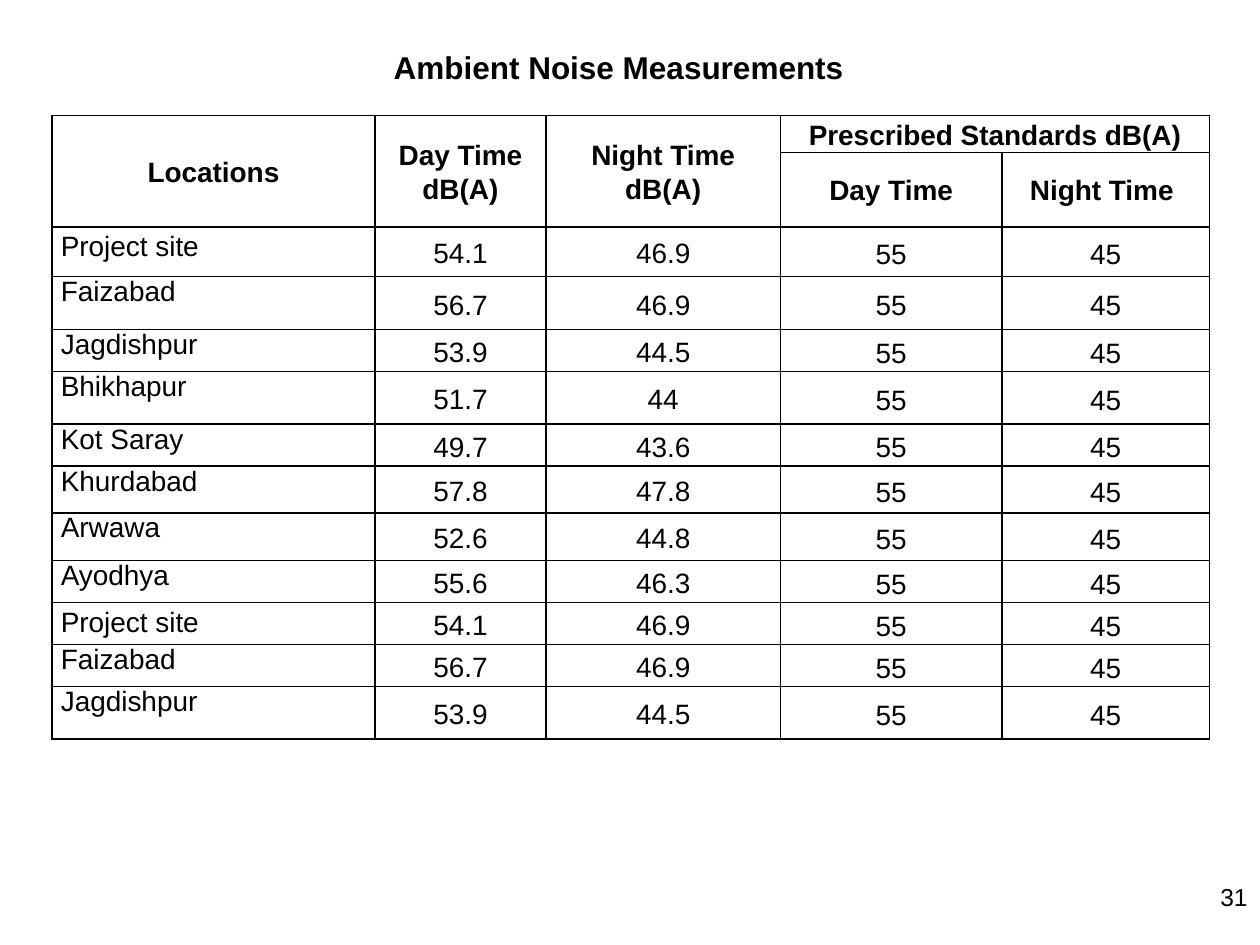
from lxml.etree import SubElement
from pptx import Presentation
from pptx.dml.color import RGBColor
from pptx.enum.text import MSO_ANCHOR, PP_ALIGN
from pptx.oxml.ns import qn
from pptx.util import Pt

BLACK = RGBColor(0, 0, 0)
FONT = "Arial"

COLUMN_WIDTHS = [184.5, 97.75, 134, 126.5, 118.75]
HEADER_HEIGHTS = [21, 42.5]
HEADER_SPACING = 1.1
VALUE_SPACING = 1.15
STANDARD_SPACING = 1.2
DAY_STANDARD, NIGHT_STANDARD = "55", "45"

# Text, first row and column, last row and column
HEADERS = [
    ("Locations", 0, 0, 1, 0),
    ("Day Time dB(A)", 0, 1, 1, 1),
    ("Night Time dB(A)", 0, 2, 1, 2),
    ("Prescribed Standards dB(A)", 0, 3, 0, 4),
    ("Day Time", 1, 3, 1, 3),
    ("Night Time ", 1, 4, 1, 4),
]

# Location, day level, night level, row height, line spacing of the location
MEASUREMENTS = [
    ("Project site", "54.1", "46.9", 28.5, 1.15),
    ("Faizabad", "56.7", "46.9", 30.25, 1),
    ("Jagdishpur", "53.9", "44.5", 24, 1),
    ("Bhikhapur", "51.7", "44", 30, 1),
    ("Kot Saray", "49.7", "43.6", 24, 1),
    ("Khurdabad", "57.8", "47.8", 26.75, 1),
    ("Arwawa", "52.6", "44.8", 27.25, 1),
    ("Ayodhya", "55.6", "46.3", 24, 1),
    ("Project site", "54.1", "46.9", 24, 1.15),
    ("Faizabad", "56.7", "46.9", 24, 1),
    ("Jagdishpur", "53.9", "44.5", 30, 1),
]


class SlideBuilder:
    def __init__(self, slide):
        self.slide = slide
        self.cell_size = 16
        self.cell_margin = 5
        self.border_width = 1

    def set_text(self, frame, text, size, align, bold=False, spacing=1):
        frame.text = text
        para = frame.paragraphs[0]
        para.alignment = align
        para.line_spacing = float(spacing)
        for span in para.runs:
            span.font.name = FONT
            span.font.size = Pt(size)
            span.font.bold = bold
            span.font.color.rgb = BLACK

    def text_box(self, text, left, top, width, height, size, align, bold=False):
        box = self.slide.shapes.add_textbox(Pt(left), Pt(top), Pt(width), Pt(height))
        box.text_frame.word_wrap = True
        self.set_text(box.text_frame, text, size, align, bold)

    def table(self, left, top, widths, heights):
        frame = self.slide.shapes.add_table(
            len(heights), len(widths), Pt(left), Pt(top), Pt(sum(widths)), Pt(sum(heights)))
        table = frame.table
        table.first_row = table.horz_banding = False
        for column, width in zip(table.columns, widths):
            column.width = Pt(width)
        for row, height in zip(table.rows, heights):
            row.height = Pt(height)
        for cell in table.iter_cells():
            self.border(cell)
            cell.fill.background()
        return table

    def border(self, cell):
        properties = cell._tc.get_or_add_tcPr()
        for side in ("lnL", "lnR", "lnT", "lnB"):
            line = SubElement(properties, qn(f"a:{side}"), w=str(Pt(self.border_width)))
            fill = SubElement(line, qn("a:solidFill"))
            SubElement(fill, qn("a:srgbClr"), val=str(BLACK))

    def cell(self, cell, text, spacing, align=PP_ALIGN.CENTER,
             anchor=MSO_ANCHOR.MIDDLE, bold=False):
        cell.margin_left = cell.margin_right = Pt(self.cell_margin)
        cell.margin_top = cell.margin_bottom = Pt(0)
        cell.vertical_anchor = anchor
        self.set_text(cell.text_frame, text, self.cell_size, align, bold, spacing)


def main():
    deck = Presentation()
    deck.slide_width, deck.slide_height = Pt(720), Pt(540)
    page = SlideBuilder(deck.slides.add_slide(deck.slide_layouts[6]))

    # Title
    page.text_box("Ambient Noise Measurements ", 30, 24, 652, 30, 18, PP_ALIGN.CENTER, bold=True)

    # Table grid
    heights = HEADER_HEIGHTS + [measurement[3] for measurement in MEASUREMENTS]
    table = page.table(29.75, 66, COLUMN_WIDTHS, heights)

    # Header cells
    for text, row, column, last_row, last_column in HEADERS:
        cell = table.cell(row, column)
        if (row, column) != (last_row, last_column):
            cell.merge(table.cell(last_row, last_column))
        page.cell(cell, text, HEADER_SPACING, bold=True)

    # Measurements beside the prescribed standards
    for row, (location, day, night, _, spacing) in enumerate(MEASUREMENTS, len(HEADER_HEIGHTS)):
        page.cell(table.cell(row, 0), location, spacing, PP_ALIGN.LEFT, MSO_ANCHOR.TOP)
        for column, level in enumerate((day, night), 1):
            page.cell(table.cell(row, column), level, VALUE_SPACING)
        for column, limit in enumerate((DAY_STANDARD, NIGHT_STANDARD), 3):
            page.cell(table.cell(row, column), limit, STANDARD_SPACING)

    # Page number
    page.text_box("31", 552, 500.5, 168, 37.5, 14, PP_ALIGN.RIGHT)

    deck.save("out.pptx")


if __name__ == "__main__":
    main()
